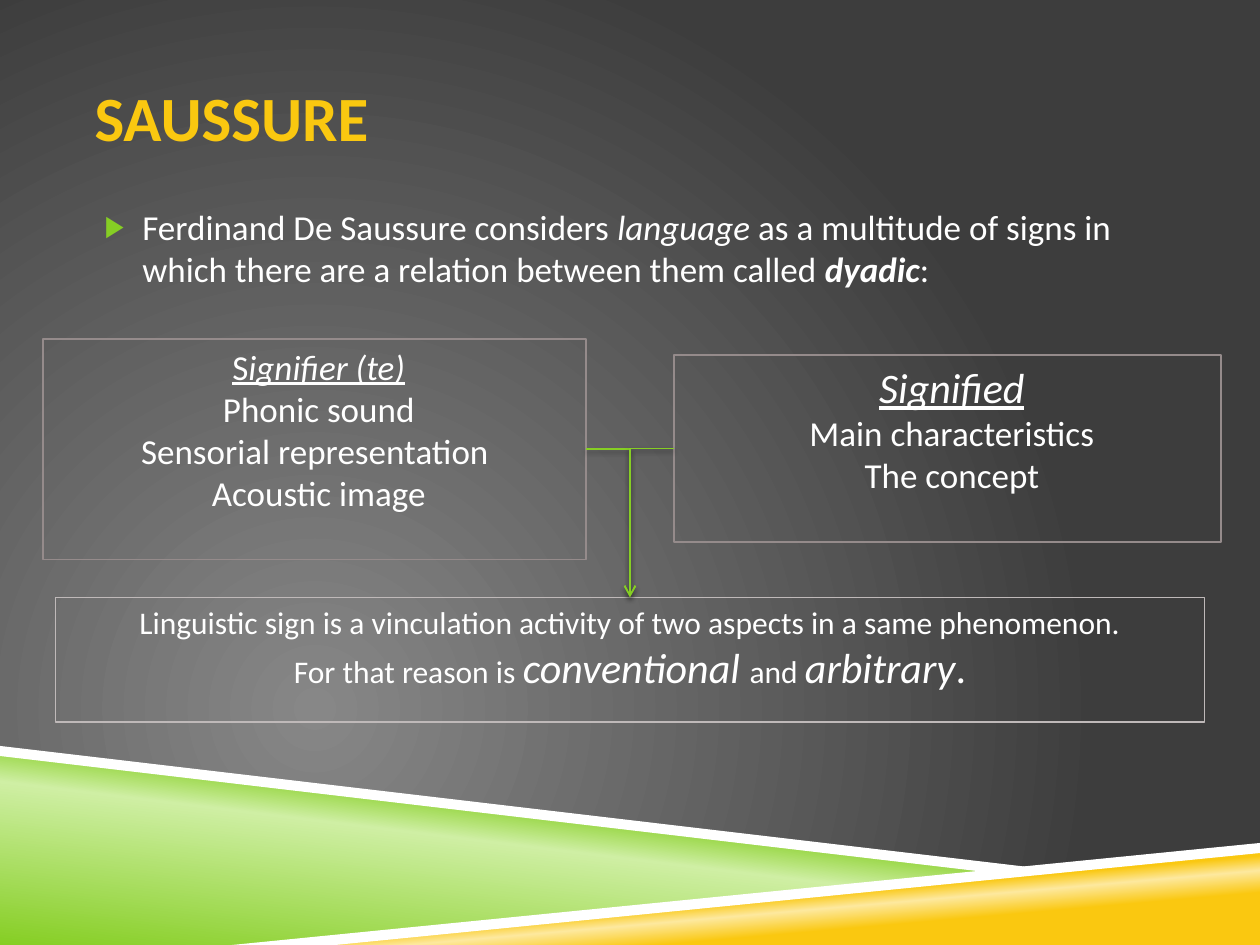
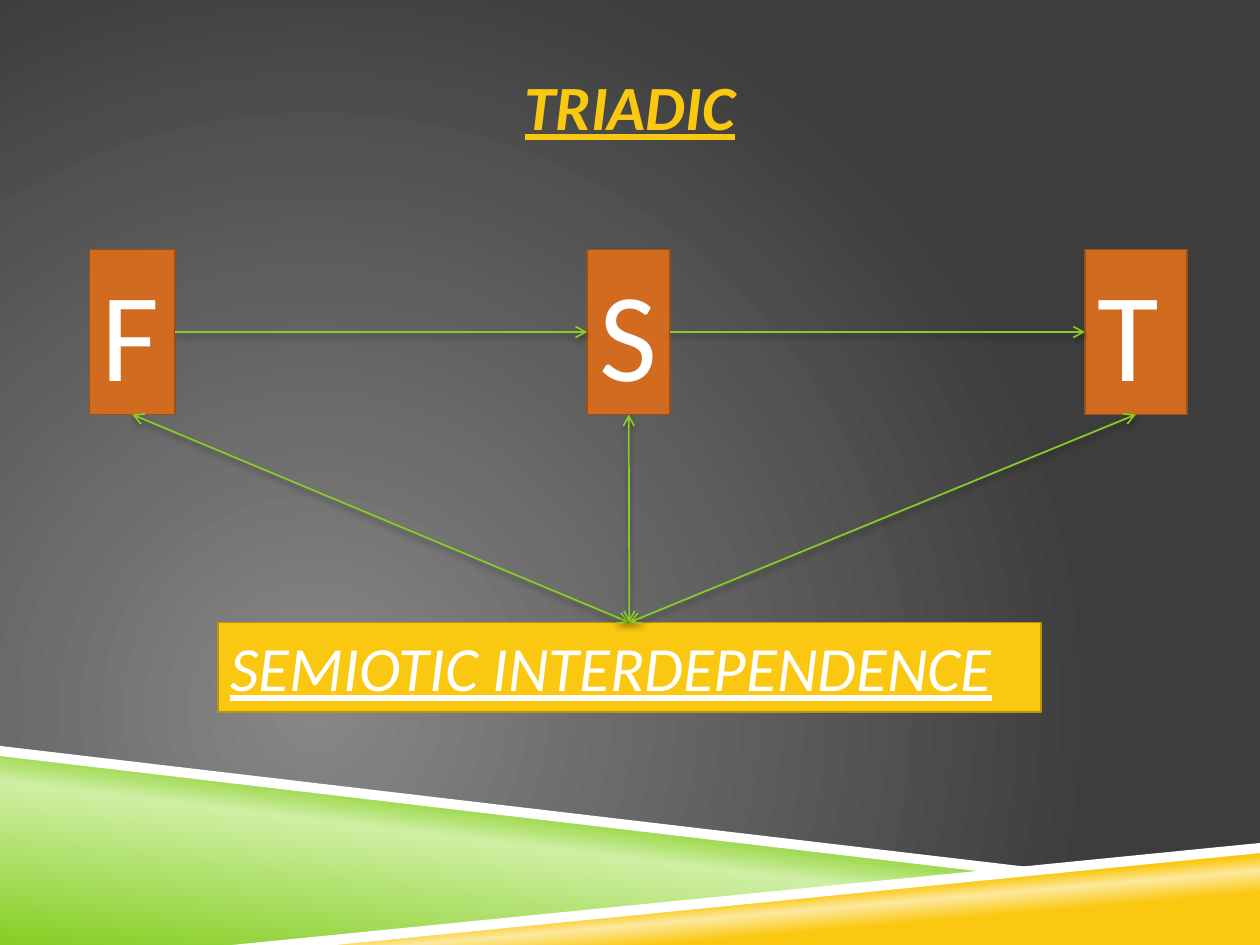
from pptx import Presentation
from pptx.dml.color import RGBColor
from pptx.enum.shapes import MSO_CONNECTOR, MSO_SHAPE
from pptx.enum.text import MSO_ANCHOR, PP_ALIGN
from pptx.oxml import parse_xml
from pptx.oxml.ns import nsdecls, qn
from pptx.util import Inches, Pt

STRAIGHT, ELBOW, CURVE = MSO_CONNECTOR.STRAIGHT, MSO_CONNECTOR.ELBOW, MSO_CONNECTOR.CURVE
RECTANGLE = MSO_SHAPE.RECTANGLE
LEFT, CENTER = PP_ALIGN.LEFT, PP_ALIGN.CENTER
TOP, MIDDLE = MSO_ANCHOR.TOP, MSO_ANCHOR.MIDDLE
TOP_SITE, LEFT_SITE, BOTTOM_SITE, RIGHT_SITE = range(4)

WHITE, GREEN, PALE_GREEN = "FFFFFF", "86CE24", "CFEFA4"
YELLOW, PALE_YELLOW, DARK_YELLOW = "FAC810", "FDE99F", "B9940C"
ORANGE, DARK_ORANGE = "D06B20", "9A4F18"
GREY_LINE, LIGHT_LINE = "958B8B", "BFB9B9"
BACKDROP = [(0, "878787"), (100, "3D3D3D")]

BANDS = [
    ([(0, 5.97), (7.92, 6.92), (2, 7.5), (0, 7.5)],
     [(0, GREEN), (52, PALE_GREEN), (66, GREEN)], 277),
    ([(1.98, 7.5), (10, 6.72), (10, 7.5)],
     [(28, YELLOW), (40, PALE_YELLOW), (48, YELLOW)], 265),
    ([(0, 5.92), (0, 6), (7.9, 6.93), (8.32, 6.9)], None, None),
    ([(10, 6.69), (1.84, 7.5), (2.66, 7.5), (10, 6.77)], None, None),
]

ITALIC = {"italic": True}
HEADING = {"italic": True, "underline": True}
LARGE_ITALIC = {"size": Pt(24), "italic": True}


def rgb(hex_color):
    """Return the colour for a hex string."""
    return RGBColor.from_string(hex_color)


def set_gradient(fill, parent, stops, direction):
    """Put a gradient with the given stops and direction in a parent's fill."""
    fill.solid()
    stop_xml = "".join(
        f'<a:gs pos="{pos * 1000}"><a:srgbClr val="{color}"/></a:gs>' for pos, color in stops)
    gradient = parse_xml(
        f'<a:gradFill {nsdecls("a")} rotWithShape="1"><a:gsLst>{stop_xml}</a:gsLst>'
        f'{direction}</a:gradFill>')
    parent.replace(parent.find(qn("a:solidFill")), gradient)


def decorate_master(master, slide):
    """Give the master its radial backdrop and the bands at the foot."""
    fill = master.background.fill
    fill.solid()
    set_gradient(
        fill, master.element.find(".//" + qn("p:bgPr")), BACKDROP,
        '<a:path path="circle"><a:fillToRect l="50000" t="100000" r="100000" b="50000"/></a:path>')
    for index, (corners, stops, angle) in enumerate(BANDS):
        first, *others = [(Inches(x), Inches(y)) for x, y in corners]
        builder = slide.shapes.build_freeform(*first)
        builder.add_line_segments(others, close=True)
        band = builder.convert_to_shape()
        band.shadow.inherit = False
        band.line.fill.background()
        if stops:
            set_gradient(band.fill, band.element.spPr, stops,
                         f'<a:lin ang="{angle * 60000}" scaled="0"/>')
        else:
            band.fill.solid()
            band.fill.fore_color.rgb = rgb(WHITE)
        master.shapes.element.insert(2 + index, band.element)


def write(paragraph, runs, size, color=WHITE, align=LEFT):
    """Write (text, format) runs into a paragraph."""
    paragraph.alignment = align
    for text, extra in runs:
        run = paragraph.add_run()
        run.text = text
        run.font.color.rgb = rgb(color)
        for key, value in {"name": "Calibri", "size": Pt(size), **extra}.items():
            setattr(run.font, key, value)


def place(placeholder, box, anchor):
    """Move a placeholder to a box and set its margins."""
    for key, value in zip(("left", "top", "width", "height"), box):
        setattr(placeholder, key, Inches(value))
    frame = placeholder.text_frame
    settings = {"margin_left": 0, "margin_right": 0, "margin_top": Inches(0.05),
                "margin_bottom": Inches(0.05), "vertical_anchor": anchor, "word_wrap": True}
    for key, value in settings.items():
        setattr(frame, key, value)
    return frame.paragraphs[0]


def add_title(slide, box, text, align=LEFT, **extra):
    """Fill the slide title."""
    write(place(slide.shapes.title, box, MIDDLE), [(text, {"bold": True, **extra})],
          36, YELLOW, align)


def add_statement(slide, box, runs):
    """Fill the body with one bulleted statement."""
    paragraph = place(slide.placeholders[1], box, TOP)
    properties = paragraph._p.get_or_add_pPr()
    properties.set("marL", str(Inches(0.38)))
    properties.set("indent", str(Inches(-0.3)))
    for bullet in (f'<a:buClr {nsdecls("a")}><a:srgbClr val="{GREEN}"/></a:buClr>',
                   f'<a:buSzPct {nsdecls("a")} val="85000"/>',
                   f'<a:buChar {nsdecls("a")} char="▶"/>'):
        properties.append(parse_xml(bullet))
    paragraph.space_before = Pt(0)
    write(paragraph, runs, 20)


def add_panel(slide, box, lines, size, outline, fill=None, align=CENTER, indent=0, weight=1):
    """Add a rectangle holding lines of text from its top."""
    panel = slide.shapes.add_shape(RECTANGLE, *map(Inches, box))
    panel.shadow.inherit = False
    panel.line.color.rgb = rgb(outline)
    panel.line.width = Pt(weight)
    if fill:
        panel.fill.solid()
        panel.fill.fore_color.rgb = rgb(fill)
    else:
        panel.fill.background()
    frame = panel.text_frame
    frame.word_wrap = True
    frame.vertical_anchor = TOP
    for index, runs in enumerate(lines):
        paragraph = frame.add_paragraph() if index else frame.paragraphs[0]
        if indent:
            paragraph._p.get_or_add_pPr().set("marL", str(Inches(indent)))
        write(paragraph, runs, size, align=align)
    return panel


def join(slide, kind, start, start_site, end, end_site, two_way=False):
    """Join two panels with a green arrow that casts a soft shadow."""
    arrow = slide.shapes.add_connector(kind, 0, 0, 0, 0)
    arrow.begin_connect(start, start_site)
    arrow.end_connect(end, end_site)
    arrow.line.color.rgb = rgb(GREEN)
    arrow.line.width = Pt(1)
    properties = arrow.element.spPr
    if kind == ELBOW:
        properties.find(qn("a:prstGeom")).set("prst", "bentConnector2")
    for tip in ("headEnd", "tailEnd") if two_way else ("tailEnd",):
        properties.find(qn("a:ln")).append(parse_xml(f'<a:{tip} {nsdecls("a")} type="arrow"/>'))
    properties.append(parse_xml(
        f'<a:effectLst {nsdecls("a")}><a:outerShdw blurRad="{Pt(3)}" dist="{Pt(2)}" '
        'dir="5400000" rotWithShape="0"><a:srgbClr val="000000"><a:alpha val="40000"/>'
        '</a:srgbClr></a:outerShdw></a:effectLst>'))


def add_dyad(slide, left, top):
    """Draw signifier and signified leading to the linguistic sign."""
    signified = add_panel(
        slide, (left + 5.01, top + 0.13, 4.34, 1.48),
        [[("Signified", {"size": Pt(24), **HEADING})],
         [("Main characteristics", {})],
         [("The concept", {})]], 20, GREY_LINE, indent=0.07)
    signifier = add_panel(
        slide, (left, top, 4.31, 1.75),
        [[("S", {"underline": True}), ("ignifier (te)", HEADING)],
         [("Phonic sound", {})],
         [("Sensorial representation ", {})],
         [("Acoustic image", {})]], 20, GREY_LINE, indent=0.07)
    sign = add_panel(
        slide, (left + 0.1, top + 2.05, 9.12, 0.99),
        [[("Linguistic sign is a vinculation activity of two aspects in a same phenomenon.", {})],
         [("For that reason is ", {}), ("conventional ", LARGE_ITALIC), ("and ", {}),
          ("arbitrary", LARGE_ITALIC), (".", {"size": Pt(24)})]],
        18, LIGHT_LINE, weight=0.75)
    join(slide, ELBOW, signifier, RIGHT_SITE, sign, TOP_SITE)
    join(slide, ELBOW, signified, LEFT_SITE, sign, TOP_SITE)


def add_triad(slide, left, top):
    """Draw three lettered terms that depend on one another."""
    terms = [
        add_panel(slide, (left + 3.95 * index, top, width, 1.31), [[(letter, {})]],
                  72, DARK_ORANGE, ORANGE, LEFT)
        for index, (letter, width) in enumerate([("F", 0.68), ("S", 0.66), ("T", 0.81)])]
    interdependence = add_panel(
        slide, (left + 1.02, top + 2.96, 6.53, 0.71),
        [[("SEMIOTIC INTERDEPENDENCE", HEADING)]], 36, DARK_YELLOW, YELLOW, LEFT)
    for term, following in zip(terms, terms[1:]):
        join(slide, CURVE, term, RIGHT_SITE, following, LEFT_SITE)
    for term in terms:
        join(slide, STRAIGHT, term, BOTTOM_SITE, interdependence, TOP_SITE, two_way=True)


def main():
    """Build the deck."""
    deck = Presentation()
    deck.slide_width, deck.slide_height = Inches(10), Inches(7.5)

    saussure = deck.slides.add_slide(deck.slide_layouts[1])
    decorate_master(deck.slide_master, saussure)
    add_title(saussure, (0.75, 0.3, 8.5, 1.25), "SAUSSURE")
    add_statement(saussure, (0.75, 1.58, 8.5, 0.94), [
        ("Ferdinand De Saussure considers ", {}), ("language", ITALIC),
        (" as a multitude of signs in which there are a relation between them called ", {}),
        ("dyadic", {"bold": True, "italic": True}), (":", {})])
    add_dyad(saussure, 0.34, 2.69)

    triadic = deck.slides.add_slide(deck.slide_layouts[5])
    add_title(triadic, (3.32, 0.42, 3.36, 0.83), "TRIADIC", CENTER, **HEADING)
    add_triad(triadic, 0.71, 1.98)

    deck.save("out.pptx")


if __name__ == "__main__":
    main()
